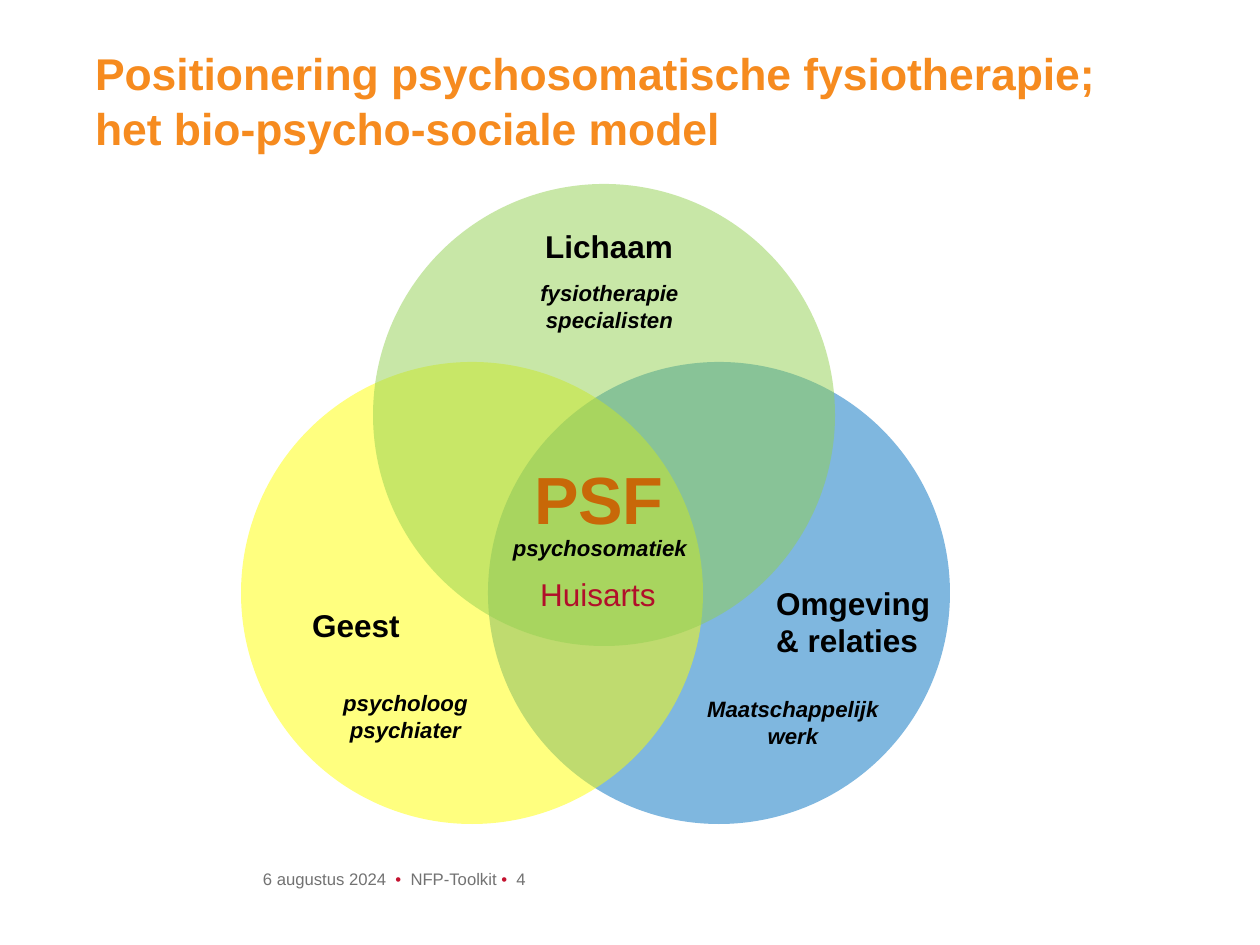
from dataclasses import dataclass

from lxml.etree import SubElement
from pptx import Presentation
from pptx.dml.color import RGBColor
from pptx.enum.shapes import MSO_SHAPE
from pptx.enum.text import MSO_ANCHOR, MSO_AUTO_SIZE, PP_ALIGN
from pptx.oxml.ns import qn
from pptx.util import Emu, Pt

EMU_PER_PX = 6858


def px(length):
    return Emu(length * EMU_PER_PX)


@dataclass(frozen=True)
class Theme:
    font: str = "Arial"
    title_color: str = "F68B1F"
    text_color: str = "000000"
    center_color: str = "C86808"
    doctor_color: str = "B10F2A"
    footer_color: str = "727272"
    bullet_color: str = "C4122F"
    environment_fill: str = "0070C0"
    mind_fill: str = "FFFF00"
    body_fill: str = "92D050"
    title_size: int = 24
    center_size: int = 36
    heading_size: int = 17
    detail_size: int = 12
    footer_size: int = 9


def add_run(paragraph, text, *, font, size, color, bold=False, italic=False):
    """Append formatted text to a paragraph; a newline becomes a line break."""
    for index, line in enumerate(text.split("\n")):
        if index:
            paragraph.add_line_break()
        run = paragraph.add_run()
        run.text = line
        run.font.name = font
        run.font.size = Pt(size)
        run.font.bold = bold
        run.font.italic = italic
        run.font.color.rgb = RGBColor.from_string(color)


class SlideBuilder:
    def __init__(self, slide, theme):
        self.slide = slide
        self.theme = theme

    def text_frame(self, left, top, width, height, wrap=True):
        box = self.slide.shapes.add_textbox(px(left), px(top), px(width), px(height))
        box.text_frame.word_wrap = wrap
        return box.text_frame

    def title(self, text, left, top, width, height):
        frame = self.text_frame(left, top, width, height)
        frame.margin_left = frame.margin_right = frame.margin_bottom = 0
        frame.margin_top = px(3)
        paragraph = frame.paragraphs[0]
        paragraph.line_spacing = 1.04
        add_run(paragraph, text, font=self.theme.font, size=self.theme.title_size,
                color=self.theme.title_color, bold=True)

    def circle(self, left, top, diameter, color, opacity=50):
        shape = self.slide.shapes.add_shape(
            MSO_SHAPE.OVAL, px(left), px(top), px(diameter), px(diameter))
        shape.shadow.inherit = False
        shape.line.fill.background()
        shape.fill.solid()
        shape.fill.fore_color.rgb = RGBColor.from_string(color)
        color_element = shape.fill._xPr.find(qn("a:solidFill"))[0]
        SubElement(color_element, qn("a:alpha"), val=str(opacity * 1000))

    def label(self, lines, left, top, width, height, *, size, color=None,
              bold=True, italic=False, align=PP_ALIGN.LEFT):
        frame = self.text_frame(left, top, width, height, wrap=False)
        frame.auto_size = MSO_AUTO_SIZE.SHAPE_TO_FIT_TEXT
        for index, line in enumerate(lines):
            paragraph = frame.add_paragraph() if index else frame.paragraphs[0]
            paragraph.alignment = align
            add_run(paragraph, line, font=self.theme.font, size=size,
                    color=color or self.theme.text_color, bold=bold, italic=italic)

    def heading(self, lines, *place):
        self.label(lines, *place, size=self.theme.heading_size)

    def detail(self, lines, *place):
        self.label(lines, *place, size=self.theme.detail_size, italic=True,
                   align=PP_ALIGN.CENTER)

    def footer(self, parts, left, top, width, height):
        frame = self.text_frame(left, top, width, height)
        frame.margin_left = frame.margin_right = frame.margin_top = 0
        frame.margin_bottom = px(7)
        frame.vertical_anchor = MSO_ANCHOR.BOTTOM
        for text in parts:
            is_bullet = text.startswith("•")
            color = self.theme.bullet_color if is_bullet else self.theme.footer_color
            add_run(frame.paragraphs[0], text, font=self.theme.font,
                    size=self.theme.footer_size, color=color)


def main():
    presentation = Presentation()
    presentation.slide_width = px(1260)
    presentation.slide_height = px(945)
    theme = Theme()
    slide = presentation.slides.add_slide(presentation.slide_layouts[6])
    builder = SlideBuilder(slide, theme)

    # Footer and title
    builder.footer(["6 augustus 2024  ", "• ", " NFP-Toolkit ", "•  ", "4"],
                   263, 861, 903, 35)
    builder.title("Positionering psychosomatische fysiotherapie;\n"
                  "het bio-psycho-sociale model", 95, 41, 1071, 131)

    # Overlapping circles
    diameter = 462
    builder.circle(488, 362, diameter, theme.environment_fill)
    builder.circle(241, 362, diameter, theme.mind_fill)
    builder.circle(373, 184, diameter, theme.body_fill)

    # Environment
    builder.heading(["Omgeving", "& relaties"], 763, 577, 183, 89)
    builder.detail(["Maatschappelijk", "werk"], 693, 689, 200, 67)

    # Body
    builder.heading(["Lichaam"], 532, 220, 156, 52)
    builder.detail(["fysiotherapie", "specialisten"], 526, 273, 167, 67)

    # Mind
    builder.heading(["Geest"], 299, 599, 116, 52)
    builder.detail(["psycholoog", "psychiater"], 329, 683, 153, 68)

    # Shared centre
    builder.detail(["psychosomatiek"], 499, 528, 202, 40)
    builder.label(["PSF"], 521, 451, 157, 95, size=theme.center_size,
                  color=theme.center_color)
    builder.label(["Huisarts"], 527, 568, 143, 52, size=theme.heading_size,
                  color=theme.doctor_color, bold=False)

    presentation.save("out.pptx")


if __name__ == "__main__":
    main()
